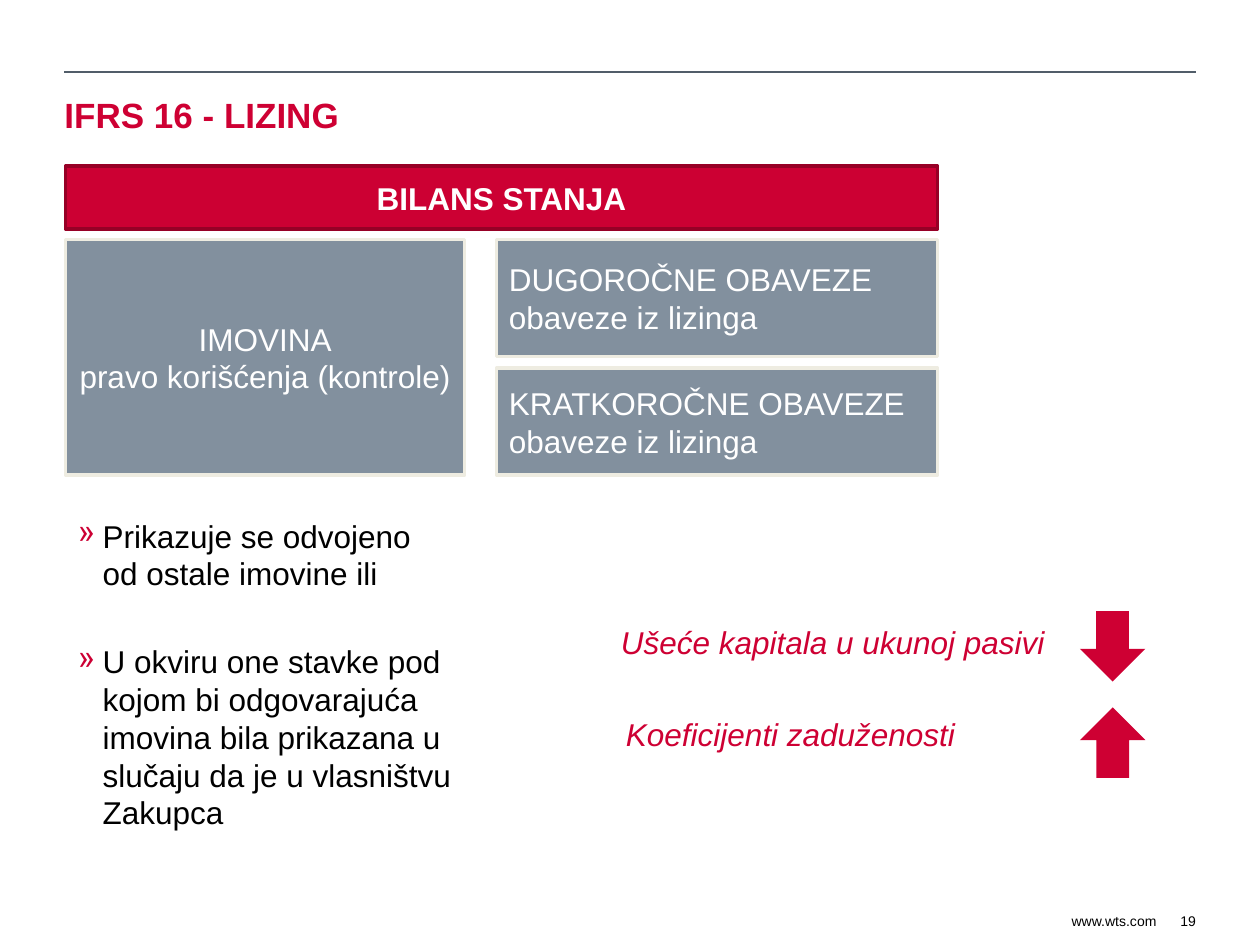
import pptx
import pptx.dml.color
import pptx.enum.shapes
import pptx.enum.text
import pptx.oxml
import pptx.oxml.ns
import pptx.util

Cm, Pt = pptx.util.Cm, pptx.util.Pt
RGBColor = pptx.dml.color.RGBColor
SHAPE = pptx.enum.shapes.MSO_SHAPE
ALIGN = pptx.enum.text.PP_ALIGN
ANCHOR = pptx.enum.text.MSO_ANCHOR

RED = RGBColor(0xCE, 0x00, 0x33)
BANNER_RED = RGBColor(0xCC, 0x00, 0x33)
DARK_RED = RGBColor(0x97, 0x00, 0x26)
GREY = RGBColor(0x82, 0x90, 0x9E)
CREAM = RGBColor(0xEE, 0xEC, 0xE1)
SLATE = RGBColor(0x51, 0x5D, 0x69)
WHITE = RGBColor(0xFF, 0xFF, 0xFF)
BLACK = RGBColor(0x00, 0x00, 0x00)


def add_bullet(p, mark="»", indent=Cm(0.5)):
    pPr = p._p.get_or_add_pPr()
    pPr.set("marL", str(indent))
    pPr.set("indent", str(-indent))
    clr = pptx.oxml.ns.qn("a:buClr")
    color = pPr.makeelement(clr, {})
    pPr.append(color)
    color.append(color.makeelement(pptx.oxml.ns.qn("a:srgbClr"), {"val": str(BANNER_RED)}))
    pPr.append(pPr.makeelement(pptx.oxml.ns.qn("a:buChar"), {"char": mark}))


def write(sp, lines, size=18, color=BLACK, bold=False, italic=False, align=ALIGN.LEFT,
          anchor=ANCHOR.MIDDLE, wrap=True, inset=True, bullets=False, gap=0):
    """Fill a shape with one paragraph for each line."""
    tf = sp.text_frame
    tf.word_wrap = wrap
    tf.vertical_anchor = anchor
    if not inset:
        tf.margin_left = tf.margin_right = tf.margin_top = tf.margin_bottom = 0
    for i, line in enumerate(lines):
        p = tf.add_paragraph() if i else tf.paragraphs[0]
        if bullets:
            add_bullet(p)
        p.alignment = align
        if i and gap:
            p.space_before = Pt(gap)
        r = p.add_run()
        r.text = line
        r.font.name = "Arial"
        r.font.size = Pt(size)
        r.font.bold = bold
        r.font.italic = italic
        r.font.color.rgb = color


def add_text(s, box, lines, **fmt):
    write(s.shapes.add_textbox(*map(Cm, box)), lines, **fmt)


def add_block(s, kind, box, fill, line=None):
    sp = s.shapes.add_shape(kind, *map(Cm, box))
    sp.shadow.inherit = False
    sp.fill.solid()
    sp.fill.fore_color.rgb = fill
    if line is None:
        sp.line.fill.background()
    else:
        sp.line.color.rgb = line
        sp.line.width = Pt(2)
    return sp


def add_frame(s, x, y, w):
    """Rule and title at the top, address and page number at the bottom."""
    rule = s.shapes.add_connector(pptx.enum.shapes.MSO_CONNECTOR.STRAIGHT,
                                  Cm(x), Cm(y), Cm(x + w), Cm(y))
    rule.line.color.rgb = SLATE
    rule.line.width = Pt(0.75)
    spPr = rule._element.spPr
    spPr.append(spPr.makeelement(pptx.oxml.ns.qn("a:effectLst"), {}))
    add_text(s, (x, y + 0.38, w, 0.94), ["IFRS 16 - LIZING"],
             size=20, color=RED, bold=True, inset=False)
    for text, right, width in (("www.wts.com", x + w - 0.79, 1.75), ("19", x + w, 0.56)):
        add_text(s, (right - width, 18.39, width, 0.35), [text],
                 size=8, align=ALIGN.RIGHT, wrap=False, inset=False)


def add_balance_sheet(s, x, y, w, h):
    """Banner above assets on the left and liabilities on the right."""
    banner = add_block(s, SHAPE.RECTANGLE, (x, y, w, 1.27), BANNER_RED, DARK_RED)
    write(banner, ["BILANS STANJA"], color=WHITE, bold=True, align=ALIGN.CENTER)
    top, right_w = y + 1.48, 8.89
    right_x = x + w - right_w
    long_h, short_h = 2.36, 2.16
    cells = [
        ((x, top, 8.05, y + h - top), "IMOVINA", "pravo korišćenja (kontrole)", ALIGN.CENTER),
        ((right_x, top, right_w, long_h), "DUGOROČNE OBAVEZE", "obaveze iz lizinga", ALIGN.LEFT),
        ((right_x, y + h - short_h, right_w, short_h),
         "KRATKOROČNE OBAVEZE", "obaveze iz lizinga", ALIGN.LEFT),
    ]
    for box, heading, detail, align in cells:
        cell = add_block(s, SHAPE.RECTANGLE, box, GREY, CREAM)
        write(cell, [heading, detail], color=WHITE, align=align)


def add_notes_on_assets(s, x, y, w, h):
    """Bulleted presentation rules below the assets."""
    add_text(s, (x, y, w, h), [
        "Prikazuje se odvojeno od ostale imovine ili",
        "U okviru one stavke pod kojom bi odgovarajuća imovina bila prikazana "
        "u slučaju da je u vlasništvu Zakupca",
    ], anchor=ANCHOR.TOP, bullets=True, gap=28.6)


def add_ratio_effects(s, x, y, w):
    """Ratios with an arrow for the direction of change."""
    arrow_w, arrow_h, pitch = 1.32, 1.42, 1.94
    effects = [
        ("Ušeće kapitala u ukunoj pasivi", (x, y - 0.1, 10.13, 1.45), ALIGN.RIGHT, 0),
        ("Koeficijenti zaduženosti", (x + 1.19, y + 1.75, 8.97, 1.45), ALIGN.LEFT, 180),
    ]
    for i, (text, box, align, turn) in enumerate(effects):
        add_text(s, box, [text], color=RED, italic=True, align=align)
        arrow = add_block(s, SHAPE.DOWN_ARROW,
                          (x + w - arrow_w, y + i * pitch, arrow_w, arrow_h), RED)
        arrow.rotation = turn


def main():
    prs = pptx.Presentation()
    prs.slide_width, prs.slide_height = Cm(25.4), Cm(19.05)
    s = prs.slides.add_slide(prs.slide_layouts[6])
    add_frame(s, 1.3, 1.45, 22.81)
    add_balance_sheet(s, 1.32, 3.35, 17.58, 6.23)
    add_notes_on_assets(s, 1.32, 10.29, 8.05, 6.73)
    add_ratio_effects(s, 11.18, 12.32, 11.91)
    prs.save("out.pptx")


if __name__ == "__main__":
    main()
